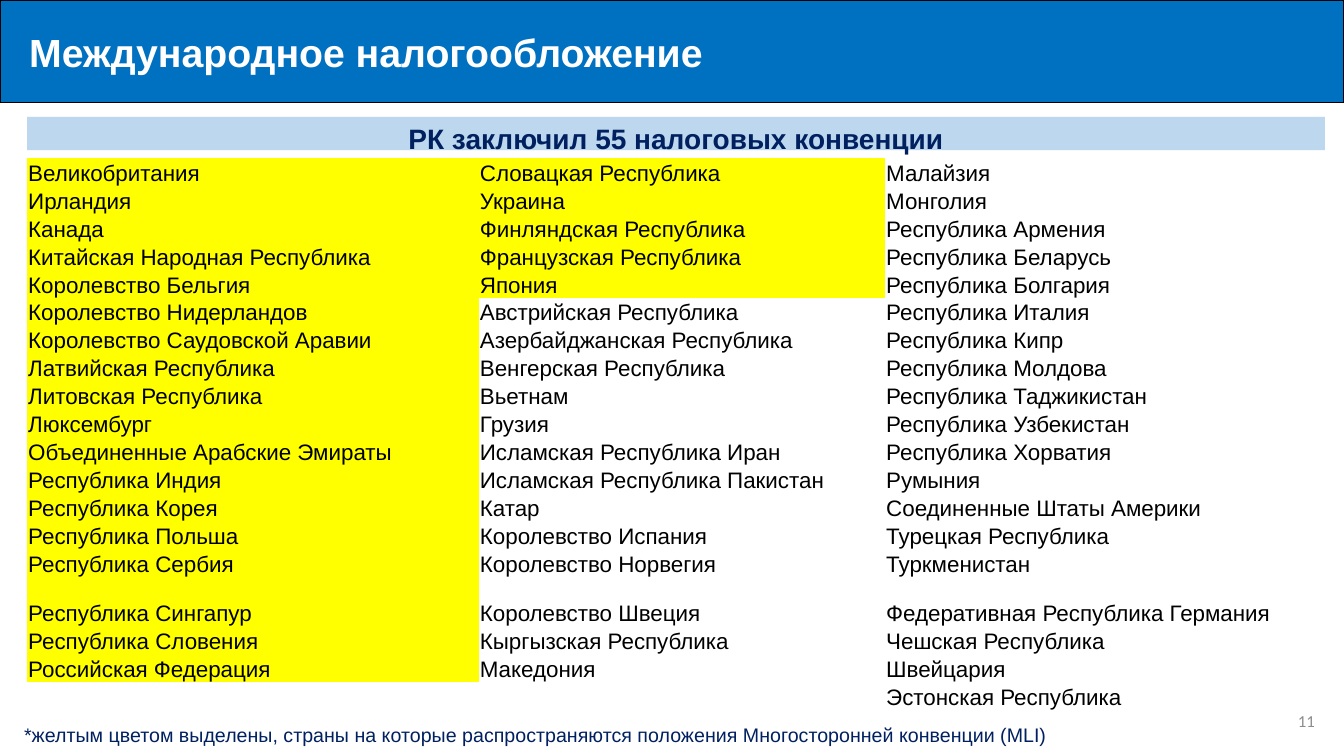
from lxml.etree import SubElement
from pptx import Presentation
from pptx.dml.color import RGBColor
from pptx.enum.shapes import MSO_SHAPE
from pptx.enum.text import MSO_ANCHOR, MSO_AUTO_SIZE, PP_ALIGN
from pptx.oxml.ns import qn
from pptx.util import Pt

PX = 9144  # 100 px to the inch
NO_STYLE = "{2D5ABB26-0587-4C30-8999-92F81FD0307C}"


def color(code):
    return RGBColor.from_string(code)


def write(frame, text, size, code, bold=False, face="Arial"):
    """Fill a text frame with one styled line and return its paragraph."""
    frame.text = text
    line = frame.paragraphs[0]
    for run in line.runs:
        font = run.font
        font.name, font.size, font.bold = face, Pt(size), bold
        font.color.rgb = color(code)
    return line


deck = Presentation()
deck.slide_width, deck.slide_height = 1333 * PX, 750 * PX
slide = deck.slides.add_slide(deck.slide_layouts[6])
shapes = slide.shapes

# Title band
title = shapes.add_shape(MSO_SHAPE.RECTANGLE, 0, 0, 1333 * PX, 102 * PX)
title.shadow.inherit = False
title.fill.solid()
title.fill.fore_color.rgb = color("0070C0")
title.line.color.rgb = color("000000")
title.line.width = Pt(1)
frame = title.text_frame
frame.margin_left = 29 * PX
frame.vertical_anchor = MSO_ANCHOR.MIDDLE
write(frame, "Международное налогообложение", 28, "FFFFFF", True).alignment = PP_ALIGN.LEFT

# Slide number
number = shapes.add_textbox(1014 * PX, 695 * PX, 300 * PX, 40 * PX)
frame = number.text_frame
frame.word_wrap = True
frame.vertical_anchor = MSO_ANCHOR.MIDDLE
write(frame, "11", 12, "8C8C8C", face="Calibri").alignment = PP_ALIGN.RIGHT

# Table heading
head = shapes.add_shape(MSO_SHAPE.RECTANGLE, 27 * PX, 116 * PX, 1287 * PX, 33 * PX)
head.shadow.inherit = False
head.fill.solid()
head.fill.fore_color.rgb = color("BDD7EE")
head.line.fill.background()
frame = head.text_frame
frame.vertical_anchor = MSO_ANCHOR.TOP
write(frame, "РК заключил 55 налоговых конвенции", 20, "002060", True).alignment = PP_ALIGN.CENTER

# Countries by column: width, number of yellow cells, names
columns = [
    (448, 18, [
        "Великобритания", "Ирландия", "Канада", "Китайская Народная Республика",
        "Королевство Бельгия", "Королевство Нидерландов",
        "Королевство Саудовской Аравии", "Латвийская Республика",
        "Литовская Республика", "Люксембург", "Объединенные Арабские Эмираты",
        "Республика Индия", "Республика Корея", "Республика Польша",
        "Республика Сербия", "Республика Сингапур", "Республика Словения",
        "Российская Федерация",
    ]),
    (403, 5, [
        "Словацкая Республика", "Украина", "Финляндская Республика",
        "Французская Республика", "Япония", "Австрийская Республика",
        "Азербайджанская Республика", "Венгерская Республика", "Вьетнам", "Грузия",
        "Исламская Республика Иран", "Исламская Республика Пакистан", "Катар",
        "Королевство Испания", "Королевство Норвегия", "Королевство Швеция",
        "Кыргызская Республика", "Македония",
    ]),
    (436, 0, [
        "Малайзия", "Монголия", "Республика Армения", "Республика Беларусь",
        "Республика Болгария", "Республика Италия", "Республика Кипр",
        "Республика Молдова", "Республика Таджикистан", "Республика Узбекистан",
        "Республика Хорватия", "Румыния", "Соединенные Штаты Америки",
        "Турецкая Республика", "Туркменистан", "Федеративная Республика Германия",
        "Чешская Республика", "Швейцария", "Эстонская Республика",
    ]),
]
count = max(len(names) for _, _, names in columns)
tall = 15
table = shapes.add_table(count, len(columns), 27 * PX, 157 * PX, 1287 * PX, 499 * PX).table
table.first_row = table.horz_banding = False
table._tbl.tblPr.find(qn("a:tableStyleId")).text = NO_STYLE
for i, row in enumerate(table.rows):
    row.height = (49 if i == tall else 25) * PX

for j, (width, marked, names) in enumerate(columns):
    table.columns[j].width = width * PX
    for i in range(count):
        cell = table.cell(i, j)
        cell.margin_left = cell.margin_right = cell.margin_top = PX
        cell.margin_bottom = 0
        cell.vertical_anchor = MSO_ANCHOR.BOTTOM
        if i < marked:
            cell.fill.solid()
            cell.fill.fore_color.rgb = color("FFFF00")
        else:
            cell.fill.background()
        if i < len(names):
            write(cell.text_frame, names[i], 16, "000000")
        else:
            # Keep an empty cell from stretching its row
            SubElement(cell.text_frame.paragraphs[0]._p, qn("a:endParaRPr"), sz="1600")

# Footnote
note = shapes.add_textbox(14 * PX, 712 * PX, 1041 * PX, 34 * PX)
frame = note.text_frame
frame.word_wrap = False
frame.auto_size = MSO_AUTO_SIZE.SHAPE_TO_FIT_TEXT
write(frame, "*желтым цветом выделены, страны на которые распространяются "
      "положения Многосторонней конвенции (MLI)", 14, "002060")

deck.save("out.pptx")
